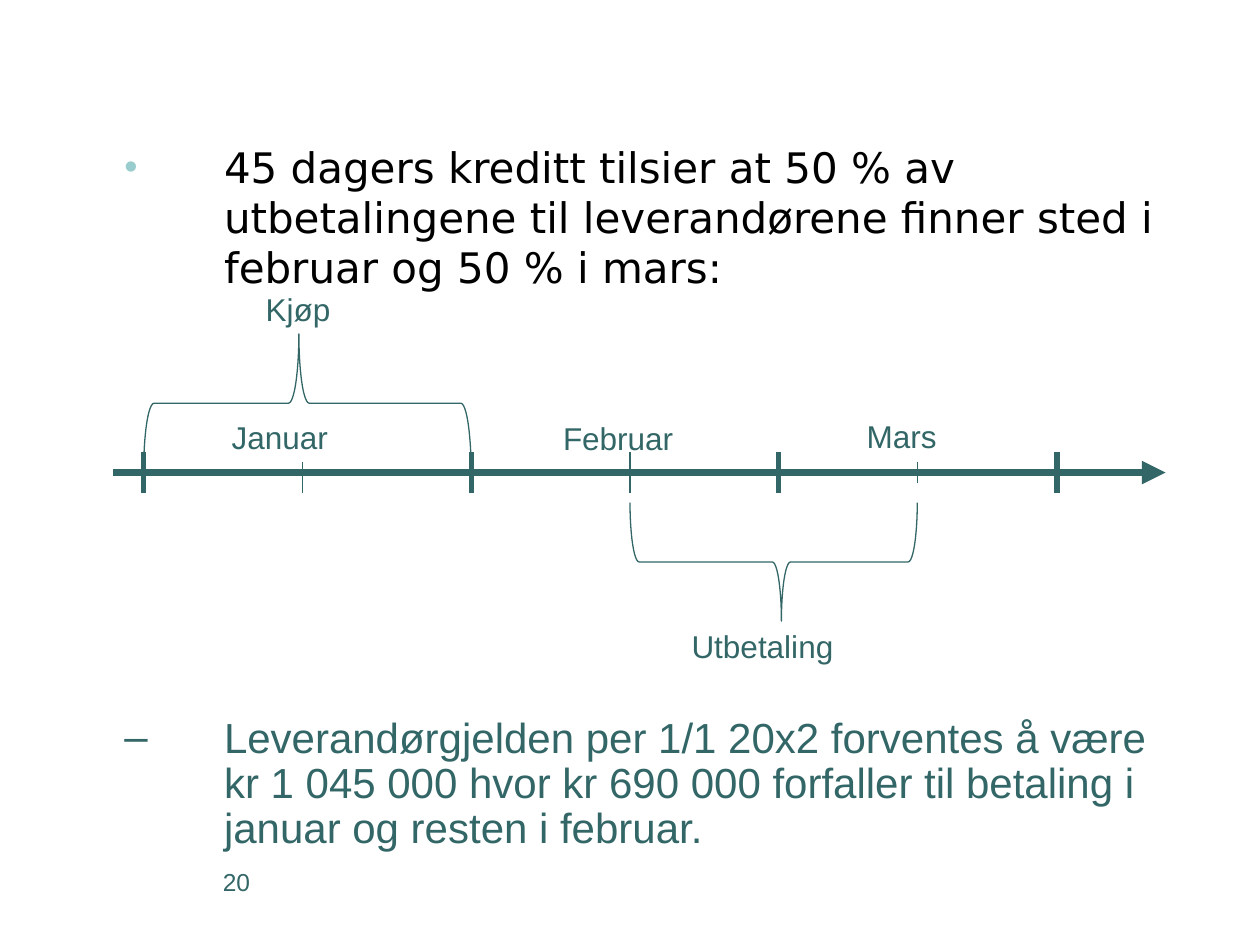
from dataclasses import dataclass

from lxml.etree import SubElement
from pptx import Presentation
from pptx.dml.color import RGBColor
from pptx.enum.shapes import MSO_CONNECTOR as Conn, MSO_SHAPE as Shape
from pptx.enum.text import MSO_AUTO_SIZE as AutoSize
from pptx.oxml.ns import qn
from pptx.util import Inches, Pt


@dataclass(frozen=True)
class Theme:
    teal: str = "336666"
    pale: str = "99CCCC"
    black: str = "000000"
    font: str = "Arial"
    lead_font: str = "DejaVu Sans"
    body: int = 24
    label: int = 18
    number: int = 14
    thin: float = 0.75
    tick: float = 3
    axis: float = 4.5


T = Theme()
COLS, ROWS = 100, 75
AXIS_Y, AXIS_ENDS = 37.5, (9, 92.5)
TICK = (35.9, 39.1)
MONTH_EDGES = (11.4, 37.4, 61.8, 83.9)
MIDPOINTS = [(24, 36.7, 39.1), (50, 35.9, 39.1), (72.8, 36.7, 38.3)]

BULLETS = [
    (10.7, "45 dagers kreditt tilsier at 50 % av utbetalingene til leverandørene "
           "finner sted i februar og 50 % i mars:",
     dict(bullet="•", bullet_color=T.pale, bullet_size=90, font=T.lead_font, color=T.black)),
    (56.4, "Leverandørgjelden per 1/1 20x2 forventes å være kr 1 045 000 hvor "
           "kr 690 000 forfaller til betaling i januar og resten i februar.",
     dict(bullet="–", spacing=0.9)),
]
LABELS = [
    ("Kjøp", 20.1, 22.5, 16.5),
    ("Utbetaling", 53.9, 49.3, 15),
    ("Januar", 17.4, 32.7, 13.4),
    ("Februar", 43.7, 32.8, 13.9),
    ("Mars", 67.8, 32.6, 9.4),
]
BRACES = [
    (MONTH_EDGES[0], MONTH_EDGES[1], 26.5, AXIS_Y, 270, (0.075, 0.474)),
    (MIDPOINTS[1][0], MIDPOINTS[2][0], 39.9, 49.3, 90, (0.077, 0.473)),
]

prs = Presentation()
prs.slide_width, prs.slide_height = Inches(10), Inches(7.5)
s = prs.slides.add_slide(prs.slide_layouts[6])


def X(col):
    return round(prs.slide_width * col / COLS)


def Y(row):
    return round(prs.slide_height * row / ROWS)


def add_text(text, x, y, w, h, size=T.label, font=T.font, color=T.teal, spacing=None,
             bullet=None, bullet_color=None, bullet_size=None, grow=False):
    tf = s.shapes.add_textbox(X(x), Y(y), X(w), Y(h)).text_frame
    tf.word_wrap = True
    if grow:
        tf.auto_size = AutoSize.SHAPE_TO_FIT_TEXT
    p = tf.paragraphs[0]
    if spacing:
        p.line_spacing = spacing
    if bullet:
        pPr = p._p.get_or_add_pPr()
        pPr.set("marL", str(Inches(1.17)))
        pPr.set("indent", str(Inches(-0.79)))
        if bullet_color:
            SubElement(SubElement(pPr, qn("a:buClr")), qn("a:srgbClr"), val=bullet_color)
        if bullet_size:
            SubElement(pPr, qn("a:buSzPct"), val=str(bullet_size * 1000))
        SubElement(pPr, qn("a:buFont"), typeface=T.font)
        SubElement(pPr, qn("a:buChar"), char=bullet)
    r = p.add_run()
    r.text = text
    r.font.size, r.font.name = Pt(size), font
    r.font.color.rgb = RGBColor.from_string(color)


def style_line(line, width):
    line.color.rgb = RGBColor.from_string(T.teal)
    line.width = Pt(width)


def add_line(x1, y1, x2, y2, width=T.thin, arrow=False):
    c = s.shapes.add_connector(Conn.STRAIGHT, X(x1), Y(y1), X(x2), Y(y2))
    style_line(c.line, width)
    if arrow:
        SubElement(c.line._get_or_add_ln(), qn("a:tailEnd"), type="triangle")
    SubElement(c._element.spPr, qn("a:effectLst"))


def add_brace(x1, x2, y1, y2, rotation, adjust):
    w, h = Y(y2 - y1), X(x2 - x1)
    cx, cy = X((x1 + x2) / 2), Y((y1 + y2) / 2)
    sp = s.shapes.add_shape(Shape.RIGHT_BRACE, cx - w // 2, cy - h // 2, w, h)
    sp.rotation = rotation
    sp.adjustments[0], sp.adjustments[1] = adjust
    sp.shadow.inherit = False
    sp.fill.background()
    style_line(sp.line, T.thin)


add_text("20", 16.7, 68.3, 14.2, 5, size=T.number)
for y, text, fmt in BULLETS:
    add_text(text, 5.1, y, 90, 10.2, size=T.body, **fmt)

add_line(AXIS_ENDS[0], AXIS_Y, AXIS_ENDS[1], AXIS_Y, width=T.axis, arrow=True)
for x in MONTH_EDGES:
    add_line(x, TICK[0], x, TICK[1], width=T.tick)
for brace in BRACES:
    add_brace(*brace)
for text, x, y, w in LABELS:
    add_text(text, x, y, w, 4, grow=True)
for x, top, bottom in MIDPOINTS:
    add_line(x, top, x, bottom)

prs.save("out.pptx")
